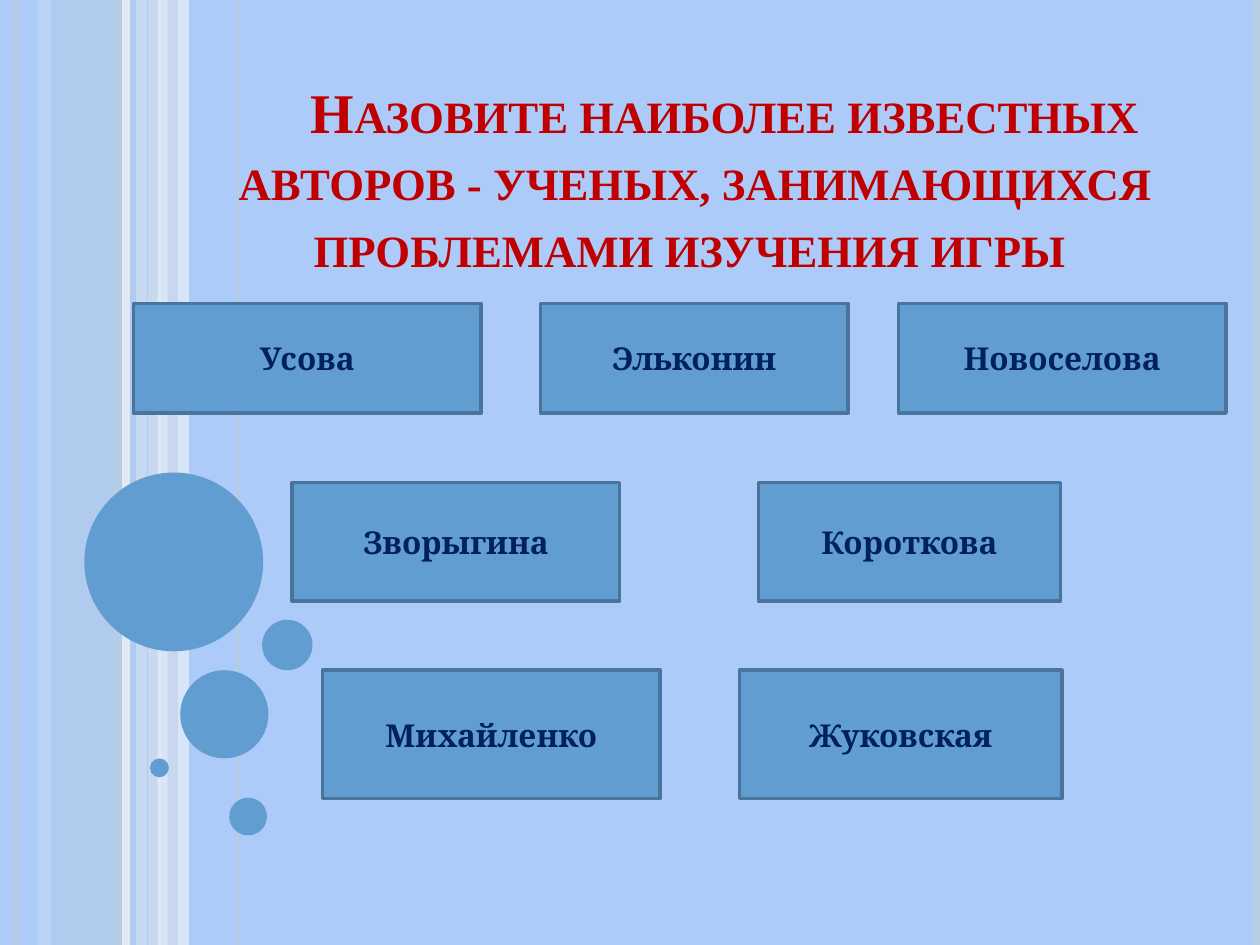
from lxml import etree
from pptx import Presentation
from pptx.dml.color import RGBColor
from pptx.enum.shapes import MSO_CONNECTOR, MSO_SHAPE
from pptx.enum.text import MSO_ANCHOR, PP_ALIGN
from pptx.oxml.ns import qn
from pptx.util import Pt

RECT, OVAL = MSO_SHAPE.RECTANGLE, MSO_SHAPE.OVAL
STRAIGHT = MSO_CONNECTOR.STRAIGHT
MIDDLE, BOTTOM = MSO_ANCHOR.MIDDLE, MSO_ANCHOR.BOTTOM
CENTER = PP_ALIGN.CENTER

WIDTH, HEIGHT = 720, 540
COLORS = {
    "background": "ACCBF9",
    "stripe": "B7CCE5",
    "light": "D3DFEE",
    "pale": "EAEFF7",
    "box": "629DD1",
    "border": "49749B",
    "name": "002060",
    "title": "C00000",
}
BANDS = [
    (30.2, 48.2, "stripe", 54),
    (21.6, 7.9, "light", 36),
    (77.8, 14.4, "light", 70),
    (90, 18, "pale", 71),
]
TOP_BAND = (95.8, 5.8, "stripe", 51)
LINES = [
    (8.6, 4.5, "stripe", 73),
    (72, 4.5, "pale", 83),
    (67, 4.5, "stripe", 100),
    (136.1, 2.25, "stripe", 82),
    (84.2, 0.75, "stripe", 100),
    (717.8, 4.5, "stripe", 100),
]
BUBBLES = [
    (48.2, 270, 102.2),
    (103, 383, 50.4),
    (85.7, 433.4, 10.8),
    (131, 455.8, 21.6),
    (149.8, 354.2, 28.8),
]
NAME_ROWS = [
    (173.5, 62.6, [("Усова", 76.3, 198.7), ("Эльконин", 308.9, 175.7),
                   ("Новоселова", 513.4, 187.2)]),
    (275.8, 67.7, [("Зворыгина", 167, 187.2), ("Короткова", 433.4, 172.8)]),
    (383, 73.4, [("Михайленко", 184.3, 193), ("Жуковская", 422.6, 184.3)]),
]


def rgb(name):
    """Return the named palette colour."""
    return RGBColor.from_string(COLORS[name])


def set_alpha(fill, percent):
    """Give a solid fill the stated opacity."""
    if percent < 100:
        color = fill._xPr.find(qn("a:solidFill"))[0]
        etree.SubElement(color, qn("a:alpha")).set("val", str(percent * 1000))


def add_filled(s, kind, x, y, w, h, color, alpha=100):
    """Add a borderless filled shape."""
    sp = s.shapes.add_shape(kind, Pt(x), Pt(y), Pt(w), Pt(h))
    sp.shadow.inherit = False
    sp.fill.solid()
    sp.fill.fore_color.rgb = rgb(color)
    set_alpha(sp.fill, alpha)
    sp.line.fill.background()
    return sp


def add_band(s, x, w, color, alpha):
    """Add a full-height translucent band."""
    add_filled(s, RECT, x, 0, w, HEIGHT, color, alpha)


def add_stripe(s, x, weight, color, alpha):
    """Add a full-height vertical line."""
    line = s.shapes.add_connector(STRAIGHT, Pt(x), 0, Pt(x), Pt(HEIGHT))
    line.line.width = Pt(weight)
    line.line.color.rgb = rgb(color)
    set_alpha(line.line.fill, alpha)
    etree.SubElement(line._element.spPr, qn("a:effectLst"))


def add_run(p, text, font, size, color):
    """Add a bold run to a paragraph."""
    r = p.add_run()
    r.text = text
    r.font.name = font
    r.font.size = Pt(size)
    r.font.bold = True
    r.font.color.rgb = rgb(color)
    return r


def add_name_box(s, text, x, y, w, h):
    """Add a bordered box holding an author's name."""
    sp = add_filled(s, RECT, x, y, w, h, "box")
    sp.line.color.rgb = rgb("border")
    sp.line.width = Pt(2)
    tf = sp.text_frame
    tf.word_wrap = True
    tf.vertical_anchor = MIDDLE
    p = tf.paragraphs[0]
    p.alignment = CENTER
    add_run(p, text, "Cambria", 18, "name")


def add_title(s, text):
    """Add the small-caps title with an indented first line."""
    tf = s.shapes.add_textbox(Pt(110.9), Pt(20.9), Pt(572.4), Pt(141.8)).text_frame
    tf.word_wrap = True
    tf.vertical_anchor = BOTTOM
    p = tf.paragraphs[0]
    p.alignment = CENTER
    p.line_spacing = Pt(38.3)
    p._p.get_or_add_pPr().set("indent", str(Pt(34)))
    r = add_run(p, text, "Times New Roman", 32, "title")
    r._r.get_or_add_rPr().set("cap", "small")


def main():
    """Build and save the slide."""
    prs = Presentation()
    prs.slide_width, prs.slide_height = Pt(WIDTH), Pt(HEIGHT)
    s = prs.slides.add_slide(prs.slide_layouts[6])
    s.background.fill.solid()
    s.background.fill.fore_color.rgb = rgb("background")
    for band in BANDS:
        add_band(s, *band)
    for line in LINES:
        add_stripe(s, *line)
    add_band(s, *TOP_BAND)
    for x, y, size in BUBBLES:
        add_filled(s, OVAL, x, y, size, size, "box")
    add_title(s, "Назовите наиболее известных авторов - ученых, "
                 "занимающихся проблемами изучения игры ")
    for y, h, names in NAME_ROWS:
        for text, x, w in names:
            add_name_box(s, text, x, y, w, h)
    prs.save("out.pptx")


if __name__ == "__main__":
    main()
